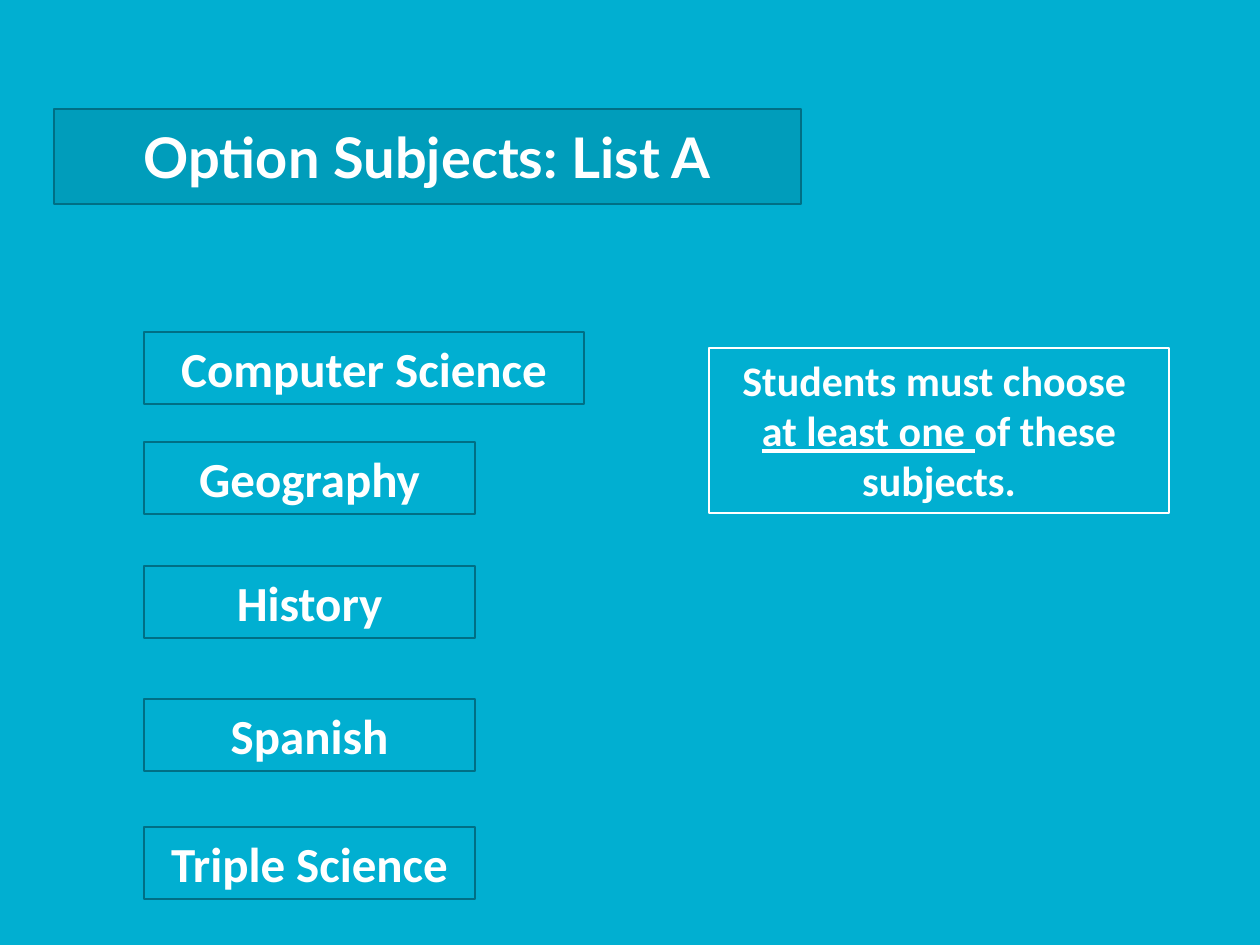
from lxml.etree import SubElement
from pptx import Presentation
from pptx.dml.color import RGBColor
from pptx.enum.shapes import MSO_SHAPE
from pptx.enum.text import MSO_ANCHOR, MSO_AUTO_SIZE, PP_ALIGN
from pptx.oxml.ns import qn
from pptx.util import Inches, Pt

SCALE = Inches(1) / 126
COLORS = {"back": "01AFD1", "teal": "006F85", "white": "FFFFFF"}
LEFT, WIDTH, HEIGHT = 144, 331, 72
SUBJECTS = [
    ("Computer Science", 332, 440),
    ("Geography", 442, WIDTH),
    ("History", 566, WIDTH),
    ("Spanish", 699, WIDTH),
    ("Triple Science", 827, WIDTH),
]


def px(n):
    return round(n * SCALE)


def color(name):
    return RGBColor.from_string(COLORS[name])


def outline(shape, name):
    shape.line.color.rgb = color(name)
    shape.line.width = Pt(0.75)


def write(shape, lines, size=28, font="Calibri", anchor=MSO_ANCHOR.TOP,
          fit=MSO_AUTO_SIZE.SHAPE_TO_FIT_TEXT):
    """Fill the shape with paragraphs, each a list of (text, underlined) runs."""
    frame = shape.text_frame
    frame.word_wrap = True
    frame.auto_size = fit
    frame.vertical_anchor = anchor
    for i, runs in enumerate(lines):
        para = frame.add_paragraph() if i else frame.paragraphs[0]
        para.alignment = PP_ALIGN.CENTER
        for text, under in runs:
            run = para.add_run()
            run.text = text
            run.font.name = font
            run.font.size = Pt(size)
            run.font.bold = True
            run.font.underline = under
            run.font.color.rgb = color("white")


def add_box(slide, x, y, w, h, lines, edge="teal", **style):
    box = slide.shapes.add_shape(MSO_SHAPE.RECTANGLE, px(x), px(y), px(w), px(h))
    box.shadow.inherit = False
    box.fill.background()
    outline(box, edge)
    write(box, lines, **style)


def set_title(slide, text):
    title = slide.shapes.title
    title.left, title.top, title.width, title.height = map(px, (54, 109, 747, 95))
    title.fill.solid()
    title.fill.fore_color.rgb = color("teal")
    tint = title.fill._xPr.find(qn("a:solidFill"))[0]
    SubElement(tint, qn("a:alpha"), val="28000")
    outline(title, "teal")
    write(title, [[(text, False)]], size=32, font="Lato",
          anchor=MSO_ANCHOR.MIDDLE, fit=MSO_AUTO_SIZE.NONE)


def main():
    deck = Presentation()
    deck.slide_width, deck.slide_height = Inches(10), Inches(7.5)
    slide = deck.slides.add_slide(deck.slide_layouts[5])
    slide.background.fill.solid()
    slide.background.fill.fore_color.rgb = color("back")

    set_title(slide, "Option Subjects: List A")
    for name, top, width in SUBJECTS:
        add_box(slide, LEFT, top, width, HEIGHT, [[(name, False)]])
    rule = [
        [("Students must choose ", False)],
        [("at least one ", True), ("of these subjects.", False)],
    ]
    add_box(slide, 709, 348, 460, 165, rule, edge="white", size=24)
    deck.save("out.pptx")


if __name__ == "__main__":
    main()
